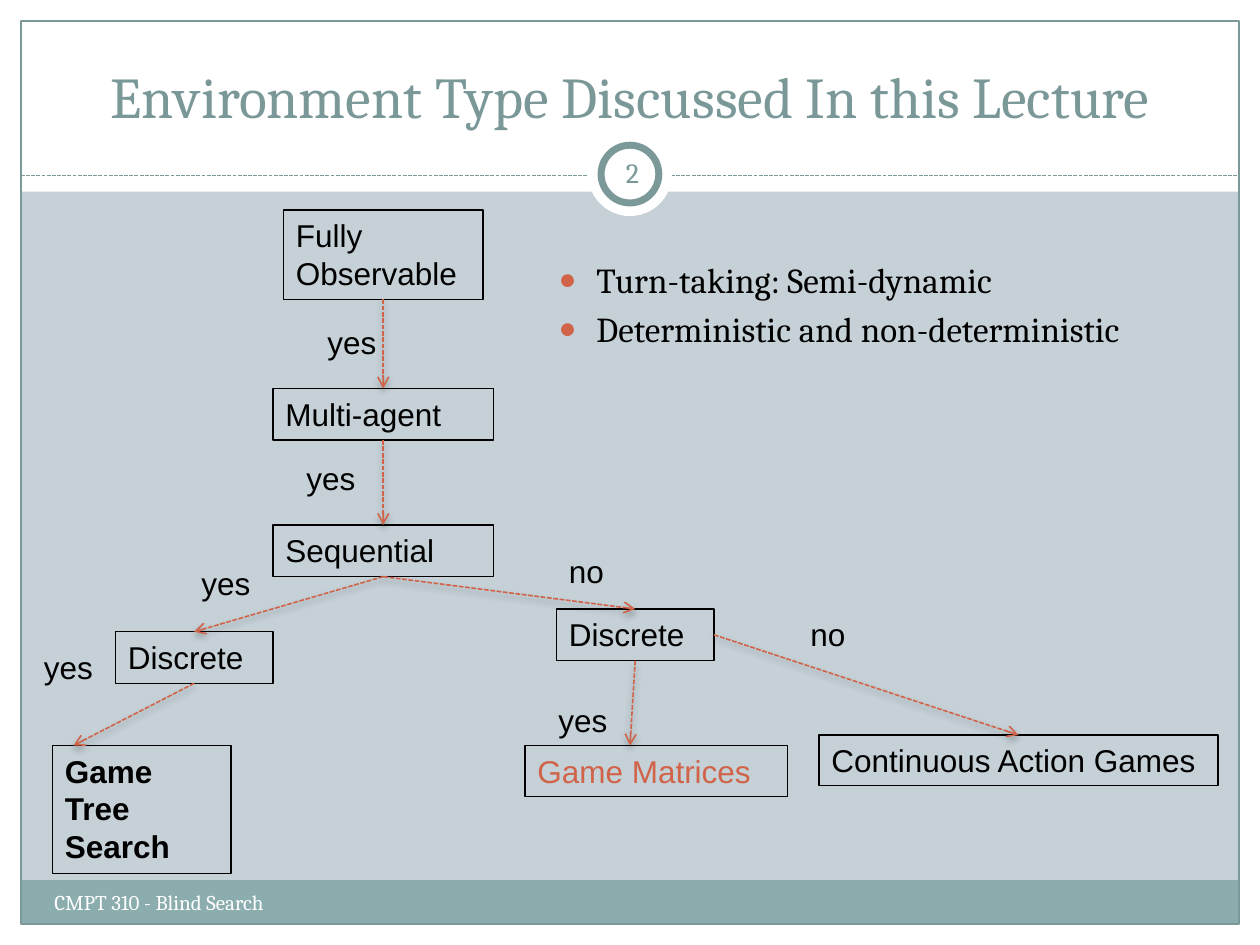
import pptx
import pptx.util
import pptx.dml.color
import pptx.enum.dml
import pptx.enum.shapes
import pptx.enum.text
import pptx.oxml

Pt = pptx.util.Pt
FORM = pptx.enum.shapes.MSO_SHAPE
ALIGN = pptx.enum.text.PP_ALIGN
ANCHOR = pptx.enum.text.MSO_ANCHOR
DASH = pptx.enum.dml.MSO_LINE.SQUARE_DOT
NS = 'xmlns:a="http://schemas.openxmlformats.org/drawingml/2006/main"'
TOP, BOTTOM, RIGHT = 0, 2, 3

COLORS = {
    "back": "C5D1D7", "white": "FFFFFF", "black": "000000", "foot": "8CADAE",
    "frame": "7C999A", "title": "7B9899", "accent": "D16349",
}
FONTS = {
    "title": {"name": "Cambria", "size": Pt(33), "bold": False},
    "body": {"name": "Cambria", "size": Pt(20)},
    "foot": {"name": "Cambria", "size": Pt(12)},
    "page": {"name": "Cambria", "size": Pt(16)},
    "node": {"name": "Arial", "size": Pt(18)},
    "goal": {"name": "Arial", "size": Pt(18), "bold": True},
}
BULLET = (
    f'<a:buClr {NS}><a:srgbClr val="{COLORS["accent"]}"/></a:buClr>',
    f'<a:buSzPct {NS} val="85000"/>',
    f'<a:buFont {NS} typeface="Arial"/>',
    f'<a:buChar {NS} char="●"/>',
)
SHADOW = (
    f'<a:effectLst {NS}><a:outerShdw blurRad="{Pt(4)}" dist="{Pt(2)}" '
    'dir="5400000" rotWithShape="0"><a:srgbClr val="000000">'
    '<a:alpha val="35000"/></a:srgbClr></a:outerShdw></a:effectLst>'
)


def rgb(name):
    return pptx.dml.color.RGBColor.from_string(COLORS[name])


def xml(parent, *parts):
    for part in parts:
        parent.append(pptx.oxml.parse_xml(part))


class Board:
    def __init__(self, deck):
        self.slide = deck.slides.add_slide(deck.slide_layouts[1])
        self.shapes = self.slide.shapes
        back = self.slide.background.fill
        back.solid()
        back.fore_color.rgb = rgb("back")

    def stroke(self, line, color, width):
        line.color.rgb = rgb(color)
        line.width = Pt(width)

    def panel(self, at, fill=None, line=None, width=0.75, form=FORM.RECTANGLE):
        shape = self.shapes.add_shape(form, *map(Pt, at))
        shape.shadow.inherit = False
        if fill:
            shape.fill.solid()
            shape.fill.fore_color.rgb = rgb(fill)
        else:
            shape.fill.background()
        if line:
            self.stroke(shape.line, line, width)
        else:
            shape.line.fill.background()

    def label(self, frame, lines, font, color, align=ALIGN.LEFT):
        frame.word_wrap = True
        frame.text = "\n".join(lines)
        for para in frame.paragraphs:
            para.alignment = align
            face = para.runs[0].font
            for key, value in FONTS[font].items():
                setattr(face, key, value)
            face.color.rgb = rgb(color)

    def holder(self, index, at, lines, font, color, align=ALIGN.LEFT):
        """Place and fill a template placeholder, in front of all so far."""
        shape = self.slide.placeholders[index]
        shape.left, shape.top, shape.width, shape.height = map(Pt, at)
        self.shapes._spTree.append(shape._element)
        self.label(shape.text_frame, lines, font, color, align)
        return shape.text_frame

    def title(self, at, text):
        frame = self.holder(0, at, [text], "title", "title", ALIGN.CENTER)
        frame.vertical_anchor = ANCHOR.BOTTOM

    def bullets(self, at, lines):
        frame = self.holder(1, at, lines, "body", "black")
        for para in frame.paragraphs:
            para.space_before = Pt(4)
            props = para._p.get_or_add_pPr()
            props.set("marL", str(Pt(21.6)))
            props.set("indent", str(Pt(-21.6)))
            xml(props, *BULLET)

    def text(self, at, text, font="node", color="black", align=ALIGN.LEFT):
        box = self.shapes.add_textbox(*map(Pt, at))
        self.label(box.text_frame, [text], font, color, align)
        return box

    def node(self, at, text, font="node", color="black"):
        box = self.text(at, text, font, color)
        self.stroke(box.line, "black", 0.75)
        return box

    def line(self, start, end, color, width):
        kind = pptx.enum.shapes.MSO_CONNECTOR.STRAIGHT
        line = self.shapes.add_connector(kind, *map(Pt, start + end))
        self.stroke(line.line, color, width)
        line.line.dash_style = DASH
        return line

    def rule(self, start, end):
        line = self.line(start, end, "frame", 0.75)
        xml(line._element.spPr, f"<a:effectLst {NS}/>")

    def arrow(self, source, side, target, shift=None):
        """Join two nodes; shift is a landing point from the target's left."""
        line = self.line((0, 0), (0, 0), "accent", 0.9)
        line.begin_connect(source, side)
        if shift is None:
            line.end_connect(target, TOP)
        else:
            line.end_x, line.end_y = target.left + Pt(shift), target.top
        xml(line.line._get_or_add_ln(), f'<a:tailEnd {NS} type="arrow"/>')
        xml(line._element.spPr, SHADOW)

    def page(self, at, text):
        frame = self.text(at, text, "page", "title", ALIGN.CENTER).text_frame
        frame.vertical_anchor = ANCHOR.MIDDLE
        for side in ("left", "top", "right", "bottom"):
            setattr(frame, f"margin_{side}", Pt(3.6))


def main():
    deck = pptx.Presentation()
    deck.slide_width, deck.slide_height = Pt(720), Pt(540)
    board = Board(deck)

    edge = 12
    for at in ((0, 528, 720, edge), (0, 0, 720, 109.5),
               (0, 0, edge, 540), (708, 0, edge, 540)):
        board.panel(at, "white")
    board.panel((edge, 503, 696, 25), "foot")
    board.panel((edge, edge, 696, 516), line="frame")
    board.rule((edge, 100.5), (708, 100.5))
    board.panel((336, 75.5, 48, 48), "white", form=FORM.OVAL)
    board.panel((343.5, 83, 33, 33), "white", "frame", 4, FORM.OVAL)

    board.title((24, 18, 672, 60), "Environment Type Discussed In this Lecture")
    board.bullets((312, 144, 384, 108), [
        "Turn-taking: Semi-dynamic", "Deterministic and non-deterministic"])
    board.text((24, 505, 282, 29), "CMPT 310 - Blind Search", "foot", "white")
    board.page((343.5, 81, 36, 34.5), "2")

    full = board.node((162, 120, 114, 51), "Fully Observable")
    multi = board.node((156, 222, 126, 29.5), "Multi-agent")
    order = board.node((156, 300, 126, 29.5), "Sequential")
    left = board.node((66, 361, 90, 29.5), "Discrete")
    right = board.node((318, 348, 90, 29.5), "Discrete")
    tree = board.node((30, 426, 102, 73), "Game Tree Search", "goal")
    games = board.node((468, 420, 228, 29), "Continuous Action Games")
    grid = board.node((300, 426, 150, 29), "Game Matrices", color="accent")

    for link in ((full, BOTTOM, multi), (multi, BOTTOM, order),
                 (order, BOTTOM, left), (order, BOTTOM, right),
                 (left, BOTTOM, tree, 12), (right, BOTTOM, grid, 60),
                 (right, RIGHT, games)):
        board.arrow(*link)

    for x, y in ((180, 181), (168, 259), (108, 319), (18, 367), (312, 397)):
        board.text((x, y, 66, 29), "yes")
    for x, y in ((318, 312), (456, 348)):
        board.text((x, y, 48, 29), "no")

    deck.save("out.pptx")


if __name__ == "__main__":
    main()
